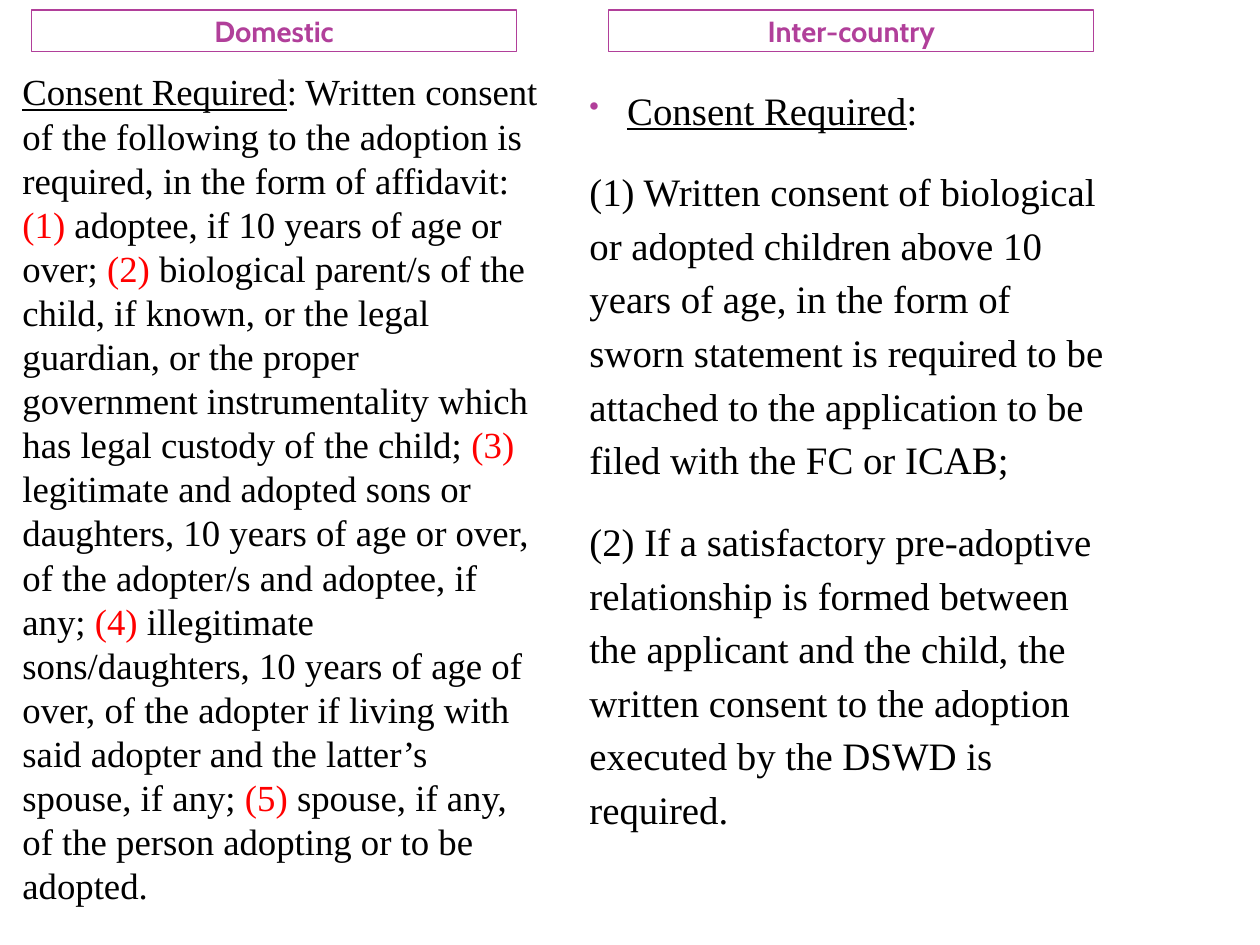
from lxml import etree
from pptx import Presentation
from pptx.dml.color import RGBColor
from pptx.enum.shapes import MSO_SHAPE
from pptx.enum.text import MSO_ANCHOR, PP_ALIGN
from pptx.oxml.ns import qn
from pptx.util import Inches, Pt

RECT = MSO_SHAPE.RECTANGLE
MIDDLE, TOP = MSO_ANCHOR.MIDDLE, MSO_ANCHOR.TOP
CENTER, LEFT = PP_ALIGN.CENTER, PP_ALIGN.LEFT
PURPLE, RED, BLACK, PAPER = "B13F9A", "FF0000", "000000", "FFFFFF"
SERIF = "Times New Roman"

HEADS = [(0.25, "Domestic"), (4.83, "Inter-country")]
TITLE = ("Consent Required", {"line": True})
DOMESTIC = [[
    TITLE,
    (": Written consent of the following to the adoption is required, "
     "in the form of affidavit: ", {}),
    ("(1)", {"color": RED}),
    (" adoptee, if 10 years of age or over; ", {}),
    ("(2)", {"color": RED}),
    (" biological parent/s of the child, if known, or the legal guardian, "
     "or the proper government instrumentality which has legal custody "
     "of the child; ", {}),
    ("(3)", {"color": RED}),
    (" legitimate and adopted sons or daughters, 10 years of age or over, "
     "of the adopter/s and adoptee, if any; ", {}),
    ("(4)", {"color": RED}),
    (" illegitimate sons/daughters, 10 years of age of over, of the adopter "
     "if living with said adopter and the latter’s spouse, if any; ", {}),
    ("(5)", {"color": RED}),
    (" spouse, if any, of the person adopting or to be adopted.", {}),
]]
FOREIGN = [
    [TITLE, (":", {})],
    [("(1) Written consent of biological or adopted children above 10 years "
      "of age, in the form of sworn statement is required to be attached to "
      "the application to be filed with the FC or ICAB;", {})],
    [("(2) If a satisfactory pre-adoptive relationship is formed between the "
      "applicant and the child, the written consent to the adoption executed "
      "by the DSWD is required.", {})],
]


def rgb(code):
    return RGBColor.from_string(code)


def add_bullet(para):
    props = para._p.get_or_add_pPr()
    props.set("marL", str(Inches(0.3)))
    props.set("indent", str(Inches(-0.3)))
    color = etree.SubElement(props, qn("a:buClr"))
    etree.SubElement(color, qn("a:srgbClr"), val=PURPLE)
    etree.SubElement(props, qn("a:buSzPct"), val="73000")
    etree.SubElement(props, qn("a:buChar"), char="•")


def write(shape, paras, size, font=SERIF, color=BLACK, bold=False, align=LEFT,
          anchor=TOP, space=1.0, after=0, bullet=False):
    frame = shape.text_frame
    frame.word_wrap = True
    frame.vertical_anchor = anchor
    for i, runs in enumerate(paras):
        para = frame.add_paragraph() if i else frame.paragraphs[0]
        if bullet and i == 0:
            add_bullet(para)
        para.alignment = align
        para.line_spacing = space
        para.space_before = Pt(6 if i else 0)
        para.space_after = Pt(after)
        for text, style in runs:
            run = para.add_run()
            run.text = text
            face = run.font
            face.name, face.size, face.bold = font, Pt(size), bold
            face.underline = style.get("line", False)
            face.color.rgb = rgb(style.get("color", color))


deck = Presentation()
deck.slide_width, deck.slide_height = Inches(10), Inches(7.5)
slide = deck.slides.add_slide(deck.slide_layouts[6])
slide.background.fill.solid()
slide.background.fill.fore_color.rgb = rgb(PAPER)

for left, name in HEADS:
    head = slide.shapes.add_shape(
        RECT, Inches(left), Inches(0.08), Inches(3.85), Inches(0.33))
    head.shadow.inherit = False
    head.fill.background()
    head.line.color.rgb = rgb(PURPLE)
    head.line.width = Pt(1)
    write(head, [[(name, {})]], 16.6, font="Cabin", color=PURPLE, bold=True,
          align=CENTER, anchor=MIDDLE)

BODIES = [
    (0.08, 0.5, 6.92, DOMESTIC, {"size": 21}),
    (4.58, 0.58, 6.83, FOREIGN,
     {"size": 22.2, "space": 1.15, "after": 10, "bullet": True}),
]
for left, top, high, paras, style in BODIES:
    body = slide.shapes.add_textbox(
        Inches(left), Inches(top), Inches(4.33), Inches(high))
    write(body, paras, **style)

deck.save("out.pptx")
